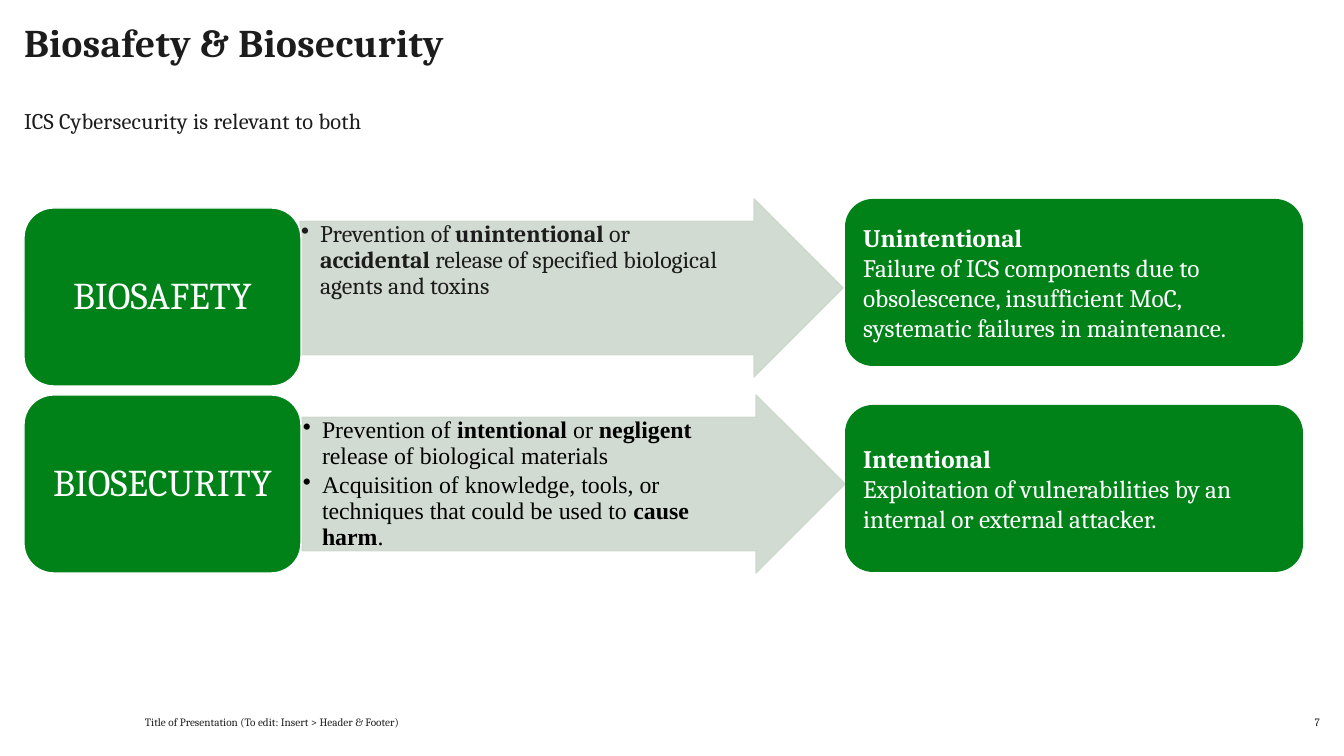
from lxml import etree
from pptx import Presentation
from pptx.dml.color import RGBColor
from pptx.enum.shapes import MSO_SHAPE
from pptx.enum.text import MSO_ANCHOR, MSO_AUTO_SIZE, PP_ALIGN
from pptx.oxml.ns import qn
from pptx.util import Emu, Pt

ARROW, ROUNDED = MSO_SHAPE.RIGHT_ARROW, MSO_SHAPE.ROUNDED_RECTANGLE
TOP, MIDDLE, BOTTOM = MSO_ANCHOR.TOP, MSO_ANCHOR.MIDDLE, MSO_ANCHOR.BOTTOM
LEFT, CENTER, RIGHT = PP_ALIGN.LEFT, PP_ALIGN.CENTER, PP_ALIGN.RIGHT
NO_AUTOFIT = MSO_AUTO_SIZE.NONE

PX_PER_INCH = 100.8
COLORS = {"ink": "1C1C1C", "black": "000000", "white": "FFFFFF",
          "green": "018219", "pale": "CCD8CC"}
SERIF, TIMES = "Cambria", "Times New Roman"

# Each row: label, tops of its three parts, definition, outcome
ROWS = [
    {"label": "BIOSAFETY", "label_top": 208, "arrow_at": (300, 199),
     "outcome_top": 199, "font": SERIF, "color": "ink",
     "definition": [
         [("Prevention of ", False), ("unintentional", True), (" or ", False),
          ("accidental", True),
          (" release of specified biological agents and toxins", False)]],
     "outcome": [
         [("Unintentional", True)],
         [("Failure of ICS components due to obsolescence, insufficient MoC, "
           "systematic failures in maintenance.", False)]]},
    {"label": "BIOSECURITY", "label_top": 395, "arrow_at": (302, 395),
     "outcome_top": 405, "font": TIMES, "color": "black",
     "definition": [
         [("Prevention of ", False), ("intentional", True), (" or ", False),
          ("negligent", True), (" release of biological materials", False)],
         [("Acquisition of knowledge, tools, or techniques that could be used to ",
           False), ("cause harm", True), (".", False)]],
     "outcome": [
         [("Intentional", True)],
         [("Exploitation of vulnerabilities by an internal or external attacker.",
           False)]]},
]


def px(value):
    return Emu(round(value * 914400 / PX_PER_INCH))


def rgb(name):
    return RGBColor.from_string(COLORS[name])


def place(holder, left, top, width, height):
    holder.left, holder.top = px(left), px(top)
    holder.width, holder.height = px(width), px(height)


def set_frame(frame, anchor, insets):
    frame.word_wrap = True
    frame.auto_size = NO_AUTOFIT
    frame.vertical_anchor = anchor
    (frame.margin_left, frame.margin_top,
     frame.margin_right, frame.margin_bottom) = [px(inset) for inset in insets]


def set_bullet(paragraph, indent):
    properties = paragraph._p.get_or_add_pPr()
    properties.set("marL", str(px(indent)))
    properties.set("indent", str(-px(indent)))
    if indent:
        etree.SubElement(properties, qn("a:buChar")).set("char", "•")
    else:
        etree.SubElement(properties, qn("a:buNone"))


def write(frame, paragraphs, size, color, font=SERIF, align=LEFT, line_spacing=1.0,
          after=0, indent=0, tracking=0):
    for number, runs in enumerate(paragraphs):
        paragraph = frame.add_paragraph() if number else frame.paragraphs[0]
        set_bullet(paragraph, indent)
        paragraph.alignment = align
        paragraph.line_spacing = line_spacing
        paragraph.space_before, paragraph.space_after = Pt(0), Pt(after)
        for words, bold in runs:
            run = paragraph.add_run()
            run.text = words
            run.font.name, run.font.size = font, Pt(size)
            run.font.bold = bold
            run.font.color.rgb = rgb(color)
            if tracking:
                run._r.get_or_add_rPr().set("spc", str(tracking))


def add_block(slide, kind, box, fill, line=None):
    block = slide.shapes.add_shape(kind, *[px(length) for length in box])
    block.shadow.inherit = False
    block.fill.solid()
    block.fill.fore_color.rgb = rgb(fill)
    if line:
        block.line.color.rgb = rgb(line)
        block.line.width = Pt(1)
    else:
        block.line.fill.background()
    return block


def add_definition(slide, row):
    arrow = add_block(slide, ARROW, (*row["arrow_at"], 543, 178), "pale", "pale")
    arrow.adjustments[0], arrow.adjustments[1] = 0.75, 0.5
    # Fill and outline are 90 % opaque
    for color in arrow._element.spPr.iter(qn("a:srgbClr")):
        etree.SubElement(color, qn("a:alpha")).set("val", "90000")
    # The right inset keeps the text out of the arrowhead
    set_frame(arrow.text_frame, TOP, (1, 1, 46, 1))
    write(arrow.text_frame, row["definition"], 17, row["color"], row["font"],
          line_spacing=0.9, after=2.5, indent=19)


def add_label(slide, row):
    label = add_block(slide, ROUNDED, (24, row["label_top"], 277, 178),
                      "green", "white")
    set_frame(label.text_frame, MIDDLE, (8, 6, 8, 6))
    write(label.text_frame, [[(row["label"], False)]], 27, "white",
          align=CENTER, line_spacing=0.9)


def add_outcome(slide, row):
    outcome = add_block(slide, ROUNDED, (845, row["outcome_top"], 458, 167), "green")
    set_frame(outcome.text_frame, MIDDLE, (10, 5, 10, 5))
    write(outcome.text_frame, row["outcome"], 18, "white")


def add_footer(slide, words, left, width, align):
    footer = slide.shapes.add_textbox(px(left), px(709), px(width), px(20))
    set_frame(footer.text_frame, BOTTOM, (0, 0, 0, 0))
    write(footer.text_frame, [[(words, False)]], 8, "ink", align=align)


def main():
    deck = Presentation()
    deck.slide_width, deck.slide_height = px(1344), px(756)
    slide = deck.slides.add_slide(deck.slide_layouts[1])

    # Title and subtitle
    title, subtitle = slide.shapes.title, slide.placeholders[1]
    place(title, 24, 24, 1296, 80)
    set_frame(title.text_frame, TOP, (0, 0, 0, 0))
    write(title.text_frame, [[("Biosafety & Biosecurity", True)]], 28, "ink",
          line_spacing=0.9, tracking=30)
    place(subtitle, 24, 107, 1296, 27)
    set_frame(subtitle.text_frame, TOP, (0, 0, 0, 0))
    write(subtitle.text_frame, [[("ICS Cybersecurity is relevant to both", False)]],
          16, "ink", tracking=20)

    # Term, definition and outcome rows
    for row in ROWS:
        add_definition(slide, row)
        add_label(slide, row)
        add_outcome(slide, row)

    # Footer
    add_footer(slide, "Title of Presentation (To edit: Insert > Header & Footer)",
               145, 516, LEFT)
    add_footer(slide, "7", 1261, 59, RIGHT)

    deck.save("out.pptx")


if __name__ == "__main__":
    main()
